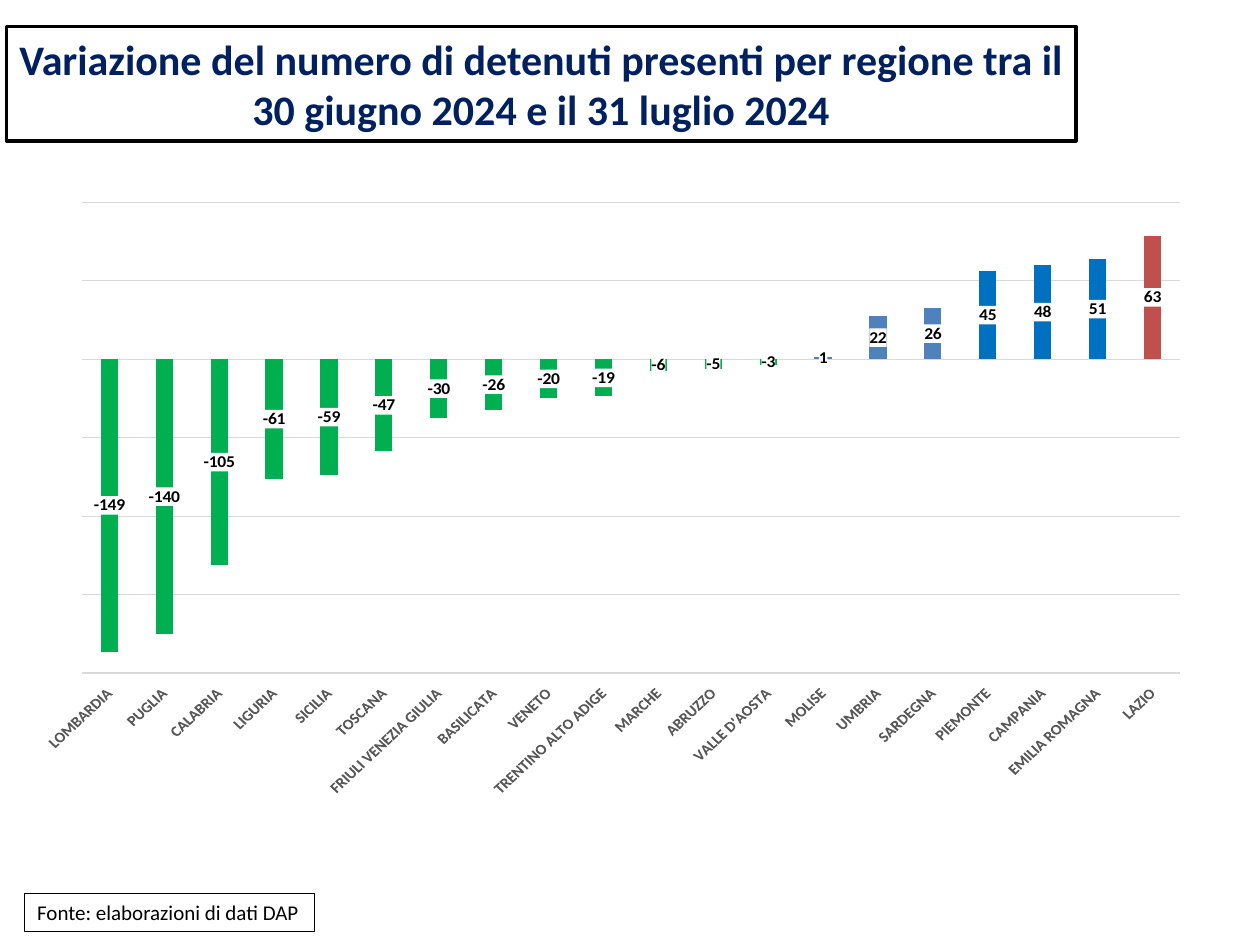
from lxml import etree
from pptx import Presentation
from pptx.chart.data import CategoryChartData
from pptx.dml.color import RGBColor
from pptx.enum.chart import XL_CHART_TYPE, XL_LABEL_POSITION, XL_TICK_LABEL_POSITION, XL_TICK_MARK
from pptx.enum.text import MSO_ANCHOR, MSO_AUTO_SIZE, PP_ALIGN
from pptx.oxml import parse_xml
from pptx.oxml.ns import nsdecls, qn
from pptx.util import Cm, Pt

COLUMN_CLUSTERED = XL_CHART_TYPE.COLUMN_CLUSTERED
LABEL_CENTER = XL_LABEL_POSITION.CENTER
LABELS_LOW = XL_TICK_LABEL_POSITION.LOW
NO_TICK = XL_TICK_MARK.NONE
ANCHOR_MIDDLE = MSO_ANCHOR.MIDDLE
NO_AUTO_SIZE = MSO_AUTO_SIZE.NONE
CENTER = PP_ALIGN.CENTER
LEFT = PP_ALIGN.LEFT

FONT = "Calibri"
COLORS = {
    "white": "FFFFFF",
    "black": "000000",
    "title": "002060",
    "axis_text": "595959",
    "grid": "D9D9D9",
    "decrease": "00B050",
    "small_increase": "4F81BD",
    "increase": "0070C0",
    "largest_increase": "C0504D",
}
CHANGES = {
    "LOMBARDIA": -149, "PUGLIA": -140, "CALABRIA": -105, "LIGURIA": -61,
    "SICILIA": -59, "TOSCANA": -47, "FRIULI VENEZIA GIULIA": -30,
    "BASILICATA": -26, "VENETO": -20, "TRENTINO ALTO ADIGE": -19,
    "MARCHE": -6, "ABRUZZO": -5, "VALLE D'AOSTA": -3, "MOLISE": 1,
    "UMBRIA": 22, "SARDEGNA": 26, "PIEMONTE": 45, "CAMPANIA": 48,
    "EMILIA ROMAGNA": 51, "LAZIO": 63,
}
PLOT_LAYOUT = {"x": 0.04, "y": 0.03, "w": 0.94, "h": 0.82}


def rgb(name):
    """Return the named colour."""
    return RGBColor.from_string(COLORS[name])


def set_font(font, size, color, bold=False):
    """Format a font."""
    font.name = FONT
    font.size = Pt(size)
    font.bold = bold
    font.color.rgb = rgb(color)


def fill_frame(shape, text, line_width, alignment):
    """Give a shape a white fill, a black outline and one paragraph; return it."""
    shape.fill.solid()
    shape.fill.fore_color.rgb = rgb("white")
    shape.line.color.rgb = rgb("black")
    shape.line.width = Pt(line_width)
    frame = shape.text_frame
    frame.auto_size = NO_AUTO_SIZE
    frame.vertical_anchor = ANCHOR_MIDDLE
    frame.text = text
    paragraph = frame.paragraphs[0]
    paragraph.alignment = alignment
    return paragraph


def add_title(slide, left, top, width, height):
    """Place the framed title in its box."""
    title = slide.shapes.title
    title.left, title.top, title.width, title.height = left, top, width, height
    text = "Variazione del numero di detenuti presenti per regione tra il 30 giugno 2024 e il 31 luglio 2024"
    paragraph = fill_frame(title, text, 2, CENTER)
    title.text_frame.word_wrap = True
    set_font(paragraph.font, 24, "title", True)


def add_source_note(slide, left, top, width, height):
    """Place the framed data source in its box."""
    note = slide.shapes.add_textbox(left, top, width, height)
    paragraph = fill_frame(note, "Fonte: elaborazioni di dati DAP", 0.75, LEFT)
    note.text_frame.word_wrap = False
    set_font(paragraph.font, 12, "black")


def column_color(value):
    """Return the colour name for a change in inmates."""
    if value < 0:
        return "decrease"
    if value == max(CHANGES.values()):
        return "largest_increase"
    return "increase" if value > 40 else "small_increase"


def set_plot_layout(chart):
    """Fix the inner plot area as fractions of the chart."""
    plot_area = chart._chartSpace.chart.plotArea
    for layout in plot_area.findall(qn("c:layout")):
        plot_area.remove(layout)
    layout = etree.Element(qn("c:layout"))
    manual = etree.SubElement(layout, qn("c:manualLayout"))
    settings = {"layoutTarget": "inner", "xMode": "edge", "yMode": "edge", **PLOT_LAYOUT}
    for tag, value in settings.items():
        etree.SubElement(manual, qn(f"c:{tag}")).set("val", str(value))
    plot_area.insert(0, layout)


def format_axes(chart):
    """Format the region axis and the hidden value axis with its grid."""
    regions = chart.category_axis
    regions.tick_label_position = LABELS_LOW
    regions.major_tick_mark = NO_TICK
    regions.minor_tick_mark = NO_TICK
    regions.format.line.color.rgb = rgb("grid")
    regions.format.line.width = Pt(0.75)
    set_font(regions.tick_labels.font, 9, "axis_text", True)
    regions._element.find(qn("c:txPr")).find(qn("a:bodyPr")).set("rot", "-2700000")

    values = chart.value_axis
    values.visible = False
    values.minimum_scale, values.maximum_scale, values.major_unit = -160, 80, 40
    values.has_major_gridlines = True
    values.major_gridlines.format.line.color.rgb = rgb("grid")
    values.major_gridlines.format.line.width = Pt(0.75)


def format_columns(plot):
    """Colour the columns and label them on white."""
    plot.gap_width, plot.overlap = 219, -27
    plot.vary_by_categories = False
    series = plot.series[0]
    series.invert_if_negative = False
    series.format.fill.solid()
    series.format.fill.fore_color.rgb = rgb("small_increase")
    for index, value in enumerate(CHANGES.values()):
        color = column_color(value)
        if color != "small_increase":
            fill = series.points[index].format.fill
            fill.solid()
            fill.fore_color.rgb = rgb(color)

    labels = series.data_labels
    labels.show_value = True
    labels.position = LABEL_CENTER
    set_font(labels.font, 10, "black", True)
    background = parse_xml(
        f'<c:spPr {nsdecls("c", "a")}><a:solidFill>'
        f'<a:srgbClr val="{COLORS["white"]}"/></a:solidFill></c:spPr>'
    )
    labels._element.find(qn("c:txPr")).addprevious(background)


def add_change_chart(slide, left, top, width, height):
    """Place the column chart of changes by region in its box."""
    data = CategoryChartData()
    data.categories = list(CHANGES)
    data.add_series("Series 1", list(CHANGES.values()))
    chart = slide.shapes.add_chart(COLUMN_CLUSTERED, left, top, width, height, data).chart
    chart.has_title = False
    chart.has_legend = False
    set_font(chart.font, 10, "black")
    set_plot_layout(chart)
    format_axes(chart)
    format_columns(chart.plots[0])


def main():
    """Build and save the presentation."""
    presentation = Presentation()
    presentation.slide_width, presentation.slide_height = Cm(25.4), Cm(19.05)
    slide = presentation.slides.add_slide(presentation.slide_layouts[5])
    add_title(slide, Cm(0.13), Cm(0.53), Cm(21.56), Cm(2.31))
    add_source_note(slide, Cm(0.5), Cm(18.01), Cm(5.84), Cm(0.77))
    add_change_chart(slide, Cm(0.71), Cm(3.73), Cm(23.55), Cm(12.34))
    presentation.save("out.pptx")


if __name__ == "__main__":
    main()
